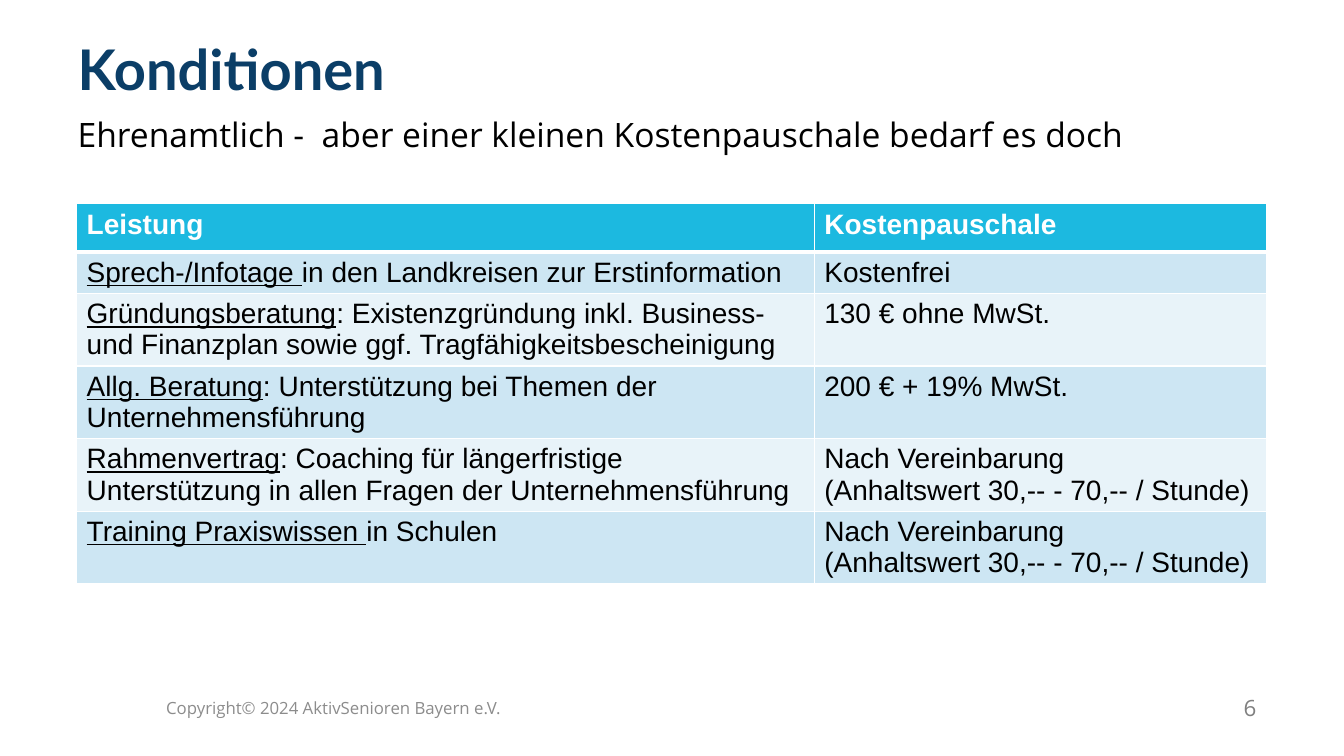
import pptx
import pptx.util
import pptx.dml.color
import pptx.enum.text
import pptx.oxml
import pptx.oxml.ns

WIDTH, HEIGHT = 13.33, 7.5
ANCHOR = pptx.enum.text.MSO_ANCHOR
ALIGN = pptx.enum.text.PP_ALIGN
TITLE = dict(name="Lato", size=40, bold=True, color="0B3E67")
SUBTITLE = dict(name="Open Sans", size=24, color="000000")
FOOTER = dict(name="Open Sans", size=12, color="8C8C8C")
NUMBER = dict(name="Open Sans", size=16, color="808080")
HEADER = dict(name="Arial", size=20, bold=True, color="FFFFFF")
BODY = dict(name="Arial", size=20, bold=False, color="000000")
HEADER_FILL = "1CB9E0"
BAND_FILLS = ("CDE6F3", "E8F3F9")
COLUMN_SHARES = (0.62, 0.38)
ROW_HEIGHTS = (0.48, 0.41, 0.72, 0.72, 0.72, 0.72)
AGREED = "Nach Vereinbarung\n(Anhaltswert 30,-- - 70,-- / Stunde)"
SERVICES = [
    ("Sprech-/Infotage ", "in den Landkreisen zur Erstinformation", "Kostenfrei"),
    ("Gründungsberatung", ": Existenzgründung inkl. Business- und Finanzplan "
     "sowie ggf. Tragfähigkeitsbescheinigung", "130 € ohne MwSt."),
    ("Allg. Beratung", ": Unterstützung bei Themen der Unternehmensführung",
     "200 € + 19% MwSt."),
    ("Rahmenvertrag", ": Coaching für längerfristige Unterstützung in allen "
     "Fragen der Unternehmensführung", AGREED),
    ("Training Praxiswissen ", "in Schulen", AGREED),
]


def rgb(value):
    return pptx.dml.color.RGBColor.from_string(value)


def inches(*lengths):
    return [pptx.util.Inches(length) for length in lengths]


def add_text(para, text, **formats):
    for index, line in enumerate(text.split("\n")):
        if index:
            para.add_line_break()
        span = para.add_run()
        span.text = line
        for key, value in formats.items():
            if key == "color":
                span.font.color.rgb = rgb(value)
            else:
                setattr(span.font, key, pptx.util.Pt(value) if key == "size" else value)


def fill_frame(shape, text, formats, align=ALIGN.LEFT, anchor=ANCHOR.MIDDLE,
               left_inset=0.1, spacing=1.0):
    frame = shape.text_frame
    settings = dict(word_wrap=True, auto_size=pptx.enum.text.MSO_AUTO_SIZE.NONE,
                    vertical_anchor=anchor, margin_left=pptx.util.Inches(left_inset),
                    margin_right=pptx.util.Inches(0.1),
                    margin_top=pptx.util.Inches(0.05),
                    margin_bottom=pptx.util.Inches(0.05))
    for key, value in settings.items():
        setattr(frame, key, value)
    para = frame.paragraphs[0]
    para.alignment, para.line_spacing = align, spacing
    add_text(para, text, **formats)


def add_heading(page, left, top, width, height):
    title = page.shapes.title
    title.left, title.top, title.width, title.height = inches(
        left, top, width, height * 0.54)
    fill_frame(title, "Konditionen", TITLE, left_inset=0, spacing=0.9)
    subtitle = page.shapes.add_textbox(*inches(
        left, top + height * 0.63, width, height * 0.37))
    fill_frame(subtitle, "Ehrenamtlich -  aber einer kleinen Kostenpauschale bedarf es doch",
               SUBTITLE, left_inset=0, spacing=0.9)


def paint_cell(cell, color, bottom_width):
    cell.fill.solid()
    cell.fill.fore_color.rgb = rgb(color)
    properties = cell._tc.get_or_add_tcPr()
    for index, side in enumerate("LRTB"):
        width = pptx.util.Pt(bottom_width if side == "B" else 1)
        properties.insert(index, pptx.oxml.parse_xml(
            f'<a:ln{side} {pptx.oxml.ns.nsdecls("a")} w="{width}"><a:solidFill>'
            f'<a:srgbClr val="FFFFFF"/></a:solidFill></a:ln{side}>'))


def add_price_table(page, left, top, width):
    table = page.shapes.add_table(
        len(ROW_HEIGHTS), len(COLUMN_SHARES),
        *inches(left, top, width, sum(ROW_HEIGHTS))).table
    for column, share in zip(table.columns, COLUMN_SHARES):
        column.width = pptx.util.Inches(width * share)
    for index, height in enumerate(ROW_HEIGHTS):
        row = table.rows[index]
        row.height = pptx.util.Inches(height)
        color = BAND_FILLS[(index - 1) % 2] if index else HEADER_FILL
        for cell in row.cells:
            paint_cell(cell, color, 1 if index else 3)
        service, price = [cell.text_frame.paragraphs[0] for cell in row.cells]
        if index:
            name, detail, cost = SERVICES[index - 1]
            add_text(service, name, underline=True, **BODY)
            add_text(service, detail, **BODY)
            add_text(price, cost, **BODY)
        else:
            add_text(service, "Leistung", **HEADER)
            add_text(price, "Kostenpauschale", **HEADER)


def add_footer(page, left, top, width, height):
    copyright_box = page.shapes.add_textbox(*inches(left, top, width * 0.8, height))
    fill_frame(copyright_box, "Copyright© 2024 AktivSenioren Bayern e.V.", FOOTER)
    number_box = page.shapes.add_textbox(*inches(
        left + width * 0.9, top, width * 0.1, height))
    fill_frame(number_box, "6", NUMBER, align=ALIGN.RIGHT)


def main():
    deck = pptx.Presentation()
    deck.slide_width, deck.slide_height = inches(WIDTH, HEIGHT)
    page = deck.slides.add_slide(deck.slide_layouts[5])
    add_heading(page, 0.77, 0.41, 11.8, 1.16)
    add_price_table(page, 0.76, 2.02, 11.8)
    add_footer(page, 1.55, 6.82, 11.01, 0.4)
    deck.save("out.pptx")


if __name__ == "__main__":
    main()
